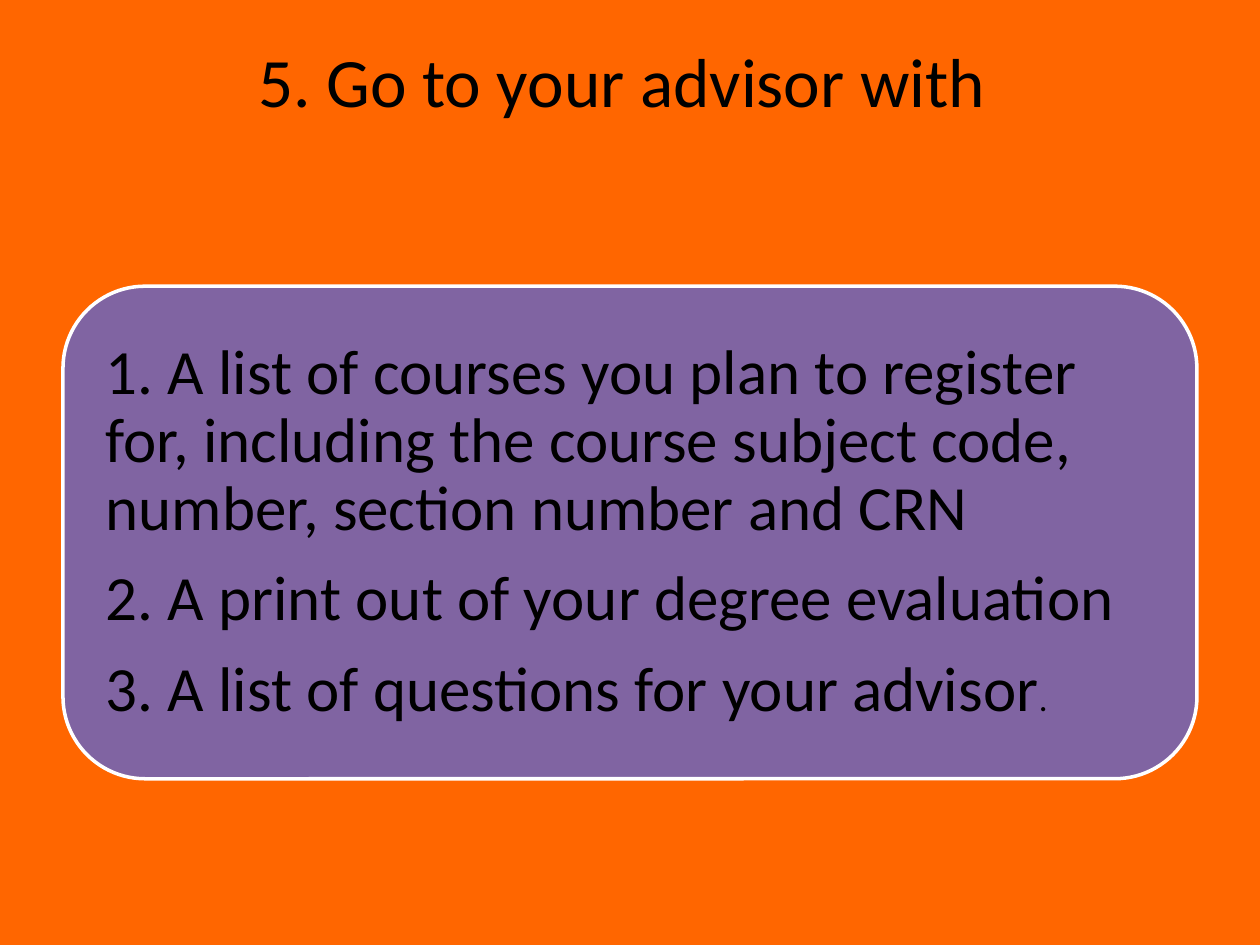
"""Build a slide listing what to bring to an advisor meeting."""
from pptx import Presentation
from pptx.dml.color import RGBColor
from pptx.enum.shapes import MSO_SHAPE
from pptx.enum.text import MSO_ANCHOR, MSO_AUTO_SIZE, PP_ALIGN
from pptx.util import Cm, Pt

ROUNDED = MSO_SHAPE.ROUNDED_RECTANGLE
TOP, MIDDLE = MSO_ANCHOR.TOP, MSO_ANCHOR.MIDDLE
LEFT, CENTER = PP_ALIGN.LEFT, PP_ALIGN.CENTER
NO_AUTOFIT = MSO_AUTO_SIZE.NONE

ORANGE = RGBColor(0xFF, 0x66, 0x00)
PURPLE = RGBColor(0x80, 0x64, 0xA2)
WHITE = RGBColor(0xFF, 0xFF, 0xFF)
BLACK = RGBColor(0x00, 0x00, 0x00)
FONT = "Calibri"

TITLE = [[("5. Go to your advisor with", 39.6)]]
ITEMS = [
    [("1. A list of courses you plan to register for, including the course "
      "subject code, number, section number and CRN", 36)],
    [("2. A print out of your degree evaluation", 36)],
    [("3. A list of questions for your advisor", 36), (".", 20)],
]

SLIDE_WIDTH, SLIDE_HEIGHT = 25.4, 19.05
MARGIN = 1.27
CONTENT_WIDTH = SLIDE_WIDTH - 2 * MARGIN
TITLE_TOP, TITLE_HEIGHT = 0.76, 3.18
PANEL_TOP, PANEL_HEIGHT = 5.77, 9.93


def write_text(shape, paragraphs, align=LEFT, anchor=MIDDLE,
               insets=(0, 0, 0, 0), line_spacing=1.0, space_after=0):
    frame = shape.text_frame
    frame.word_wrap = True
    frame.auto_size = NO_AUTOFIT
    frame.vertical_anchor = anchor
    (frame.margin_left, frame.margin_top,
     frame.margin_right, frame.margin_bottom) = map(Cm, insets)
    for index, runs in enumerate(paragraphs):
        paragraph = frame.add_paragraph() if index else frame.paragraphs[0]
        paragraph.alignment = align
        paragraph.line_spacing = line_spacing
        paragraph.space_before = Pt(0)
        paragraph.space_after = Pt(space_after)
        for text, size in runs:
            run = paragraph.add_run()
            run.text = text
            run.font.name = FONT
            run.font.size = Pt(size)
            run.font.color.rgb = BLACK


def main():
    presentation = Presentation()
    presentation.slide_width = Cm(SLIDE_WIDTH)
    presentation.slide_height = Cm(SLIDE_HEIGHT)
    slide = presentation.slides.add_slide(presentation.slide_layouts[5])
    slide.background.fill.solid()
    slide.background.fill.fore_color.rgb = ORANGE

    title = slide.shapes.title
    title.left, title.top = Cm(MARGIN), Cm(TITLE_TOP)
    title.width, title.height = Cm(CONTENT_WIDTH), Cm(TITLE_HEIGHT)
    write_text(title, TITLE, align=CENTER, anchor=TOP, insets=(0, 0, 0.32, 0))

    panel = slide.shapes.add_shape(ROUNDED, Cm(MARGIN), Cm(PANEL_TOP),
                                   Cm(CONTENT_WIDTH), Cm(PANEL_HEIGHT))
    panel.shadow.inherit = False
    panel.fill.solid()
    panel.fill.fore_color.rgb = PURPLE
    panel.line.color.rgb = WHITE
    panel.line.width = Pt(2)
    write_text(panel, ITEMS, insets=(0.38,) * 4, line_spacing=0.9,
               space_after=12.6)

    presentation.save("out.pptx")


if __name__ == "__main__":
    main()
